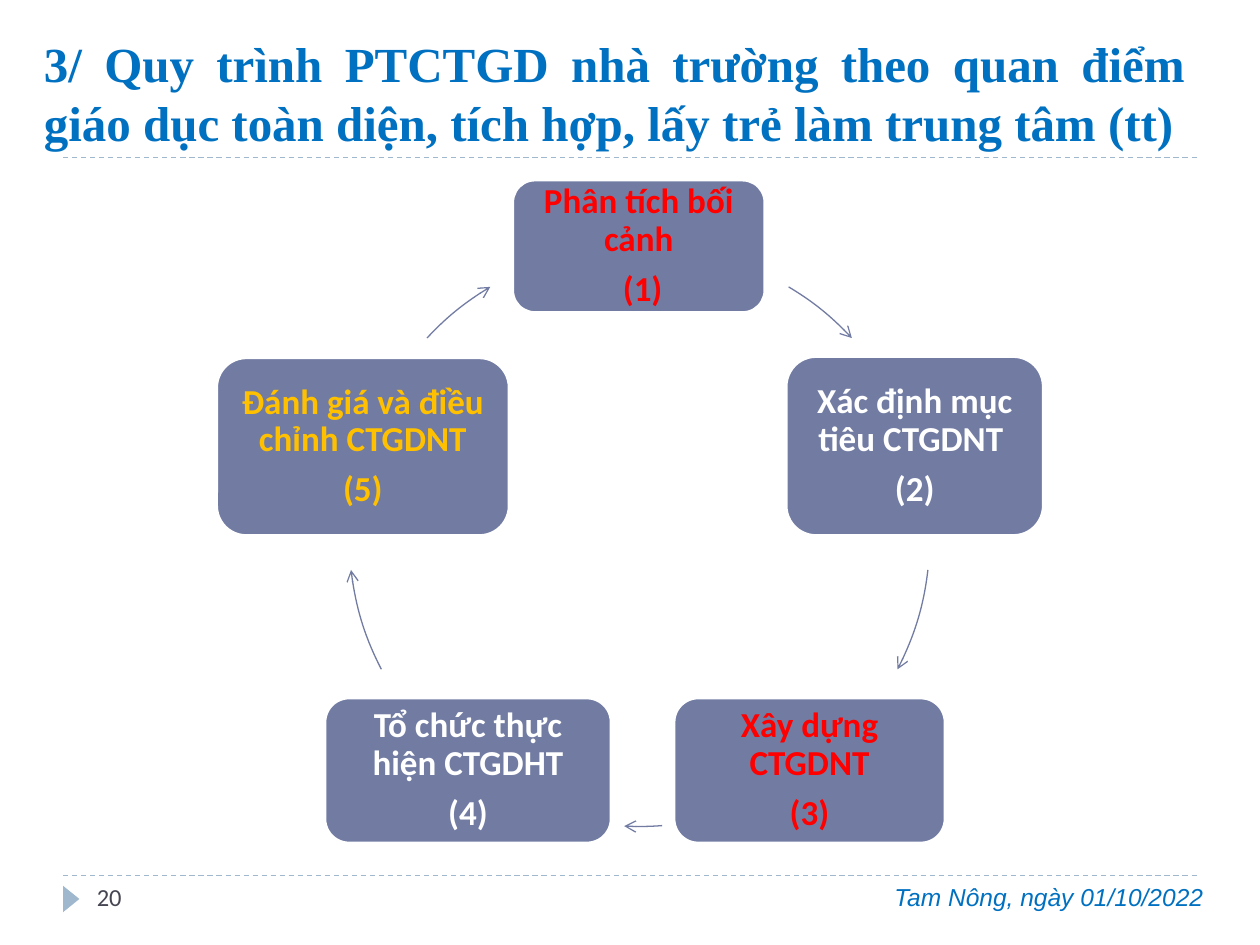
"""Build the slide showing the five-step curriculum development cycle."""
import pptx
import pptx.dml.color
import pptx.enum.dml
import pptx.enum.shapes
import pptx.enum.text
import pptx.oxml
import pptx.oxml.ns
import pptx.util

Inches = pptx.util.Inches
Pt = pptx.util.Pt
RGBColor = pptx.dml.color.RGBColor
MSO_SHAPE = pptx.enum.shapes.MSO_SHAPE
PP_ALIGN = pptx.enum.text.PP_ALIGN
MSO_ANCHOR = pptx.enum.text.MSO_ANCHOR

BLUE = RGBColor(0x00, 0x70, 0xC0)
SLATE = RGBColor(0x72, 0x7C, 0xA3)
PALE = RGBColor(0x9F, 0xB8, 0xCD)
RED = RGBColor(0xFF, 0x00, 0x00)
GOLD = RGBColor(0xFF, 0xC0, 0x00)
WHITE = RGBColor(0xFF, 0xFF, 0xFF)
DARK = RGBColor(0x46, 0x46, 0x53)

RING = (2.77, 1.95, 4.61, 4.61)
STEPS = [
    ((4.07, 1.43, 2, 1.05), ["Phân tích bối cảnh", " (1)"], RED),
    ((6.24, 2.83, 2.04, 1.42), ["Xác định mục tiêu CTGDNT ", "(2)"], WHITE),
    ((5.35, 5.54, 2.15, 1.15), ["Xây dựng CTGDNT", "(3)"], RED),
    ((2.58, 5.54, 2.27, 1.15), ["Tổ chức thực hiện CTGDHT", "(4)"], WHITE),
    ((1.72, 2.84, 2.32, 1.41), ["Đánh giá và điều chỉnh CTGDNT", "(5)"], GOLD),
]
ARCS = [(300.9, 317), (6.7, 27.3), (85.5, 93), (152.7, 173.3), (223, 239.1)]


def set_all(obj, values):
    for name, value in values.items():
        setattr(obj, name, value)


class SlideBuilder:
    def __init__(self, slide):
        self.slide = slide
        self.step_font = {"name": "Calibri", "size": Pt(20), "bold": True}
        self.step_para = {"alignment": PP_ALIGN.CENTER, "line_spacing": 0.9,
                          "space_after": Pt(7)}
        self.step_frame = {"word_wrap": True, "vertical_anchor": MSO_ANCHOR.MIDDLE}
        for side in ("left", "right", "top", "bottom"):
            self.step_frame["margin_" + side] = Inches(0.08)

    def add_lines(self, tf, lines, color, font, para):
        for i, line in enumerate(lines):
            p = tf.paragraphs[0] if i == 0 else tf.add_paragraph()
            set_all(p, para)
            r = p.add_run()
            r.text = line
            set_all(r.font, font)
            r.font.color.rgb = color

    def text(self, box, line, color, font, para=None, frame=None):
        sp = self.slide.shapes.add_textbox(*map(Inches, box))
        set_all(sp.text_frame, {"word_wrap": True, **(frame or {})})
        self.add_lines(sp.text_frame, [line], color, font, para or {})

    def shape(self, kind, box, fill):
        sp = self.slide.shapes.add_shape(kind, *map(Inches, box))
        sp.shadow.inherit = False
        sp.fill.solid()
        sp.fill.fore_color.rgb = fill
        sp.line.fill.background()
        return sp

    def step(self, box, lines, color):
        sp = self.shape(MSO_SHAPE.ROUNDED_RECTANGLE, box, SLATE)
        sp.line.color.rgb = WHITE
        sp.line.width = Pt(1.5)
        set_all(sp.text_frame, self.step_frame)
        self.add_lines(sp.text_frame, lines, color, self.step_font, self.step_para)

    def arc(self, start, end):
        sp = self.shape(MSO_SHAPE.ARC, RING, SLATE)
        sp.fill.background()
        for i, degrees in enumerate((start, end)):
            sp.adjustments[i] = degrees * 0.6
        sp.line.color.rgb = SLATE
        sp.line.width = Pt(0.75)
        tail = pptx.oxml.parse_xml(
            "<a:tailEnd %s type='arrow'/>" % pptx.oxml.ns.nsdecls("a"))
        sp._element.spPr.find(pptx.oxml.ns.qn("a:ln")).append(tail)

    def rule(self, y):
        sp = self.slide.shapes.add_connector(
            pptx.enum.shapes.MSO_CONNECTOR.STRAIGHT,
            Inches(0.5), Inches(y), Inches(9.5), Inches(y))
        sp.line.color.rgb = PALE
        set_all(sp.line, {"width": Pt(0.75),
                          "dash_style": pptx.enum.dml.MSO_LINE.DASH})
        sp._element.spPr.append(pptx.oxml.parse_xml(
            "<a:effectLst %s/>" % pptx.oxml.ns.nsdecls("a")))


def main():
    prs = pptx.Presentation()
    set_all(prs, {"slide_width": Inches(10), "slide_height": Inches(7.5)})
    s = SlideBuilder(prs.slides.add_slide(prs.slide_layouts[6]))
    for y in (6.95, 1.25):
        s.rule(y)
    marker = s.shape(MSO_SHAPE.ISOSCELES_TRIANGLE, (0.46, 7.07, 0.21, 0.13), PALE)
    marker.rotation = 90
    s.text((0.25, 0.17, 9.25, 1.08),
           "3/ Quy trình PTCTGD nhà trường theo quan điểm giáo dục toàn diện, "
           "tích hợp, lấy trẻ làm trung tâm (tt)", BLUE,
           {"name": "Times New Roman", "size": Pt(28), "bold": True},
           {"alignment": PP_ALIGN.JUSTIFY}, {"vertical_anchor": MSO_ANCHOR.BOTTOM})
    for step, arc in zip(STEPS, ARCS):
        s.step(*step)
        s.arc(*arc)
    s.text((7, 6.95, 2.75, 0.4), "Tam Nông, ngày 01/10/2022", BLUE,
           {"name": "Arial", "size": Pt(14), "italic": True})
    s.text((0.67, 6.95, 2.17, 0.4), "20", DARK, {"name": "Calibri", "size": Pt(14)})
    prs.save("out.pptx")


if __name__ == "__main__":
    main()
